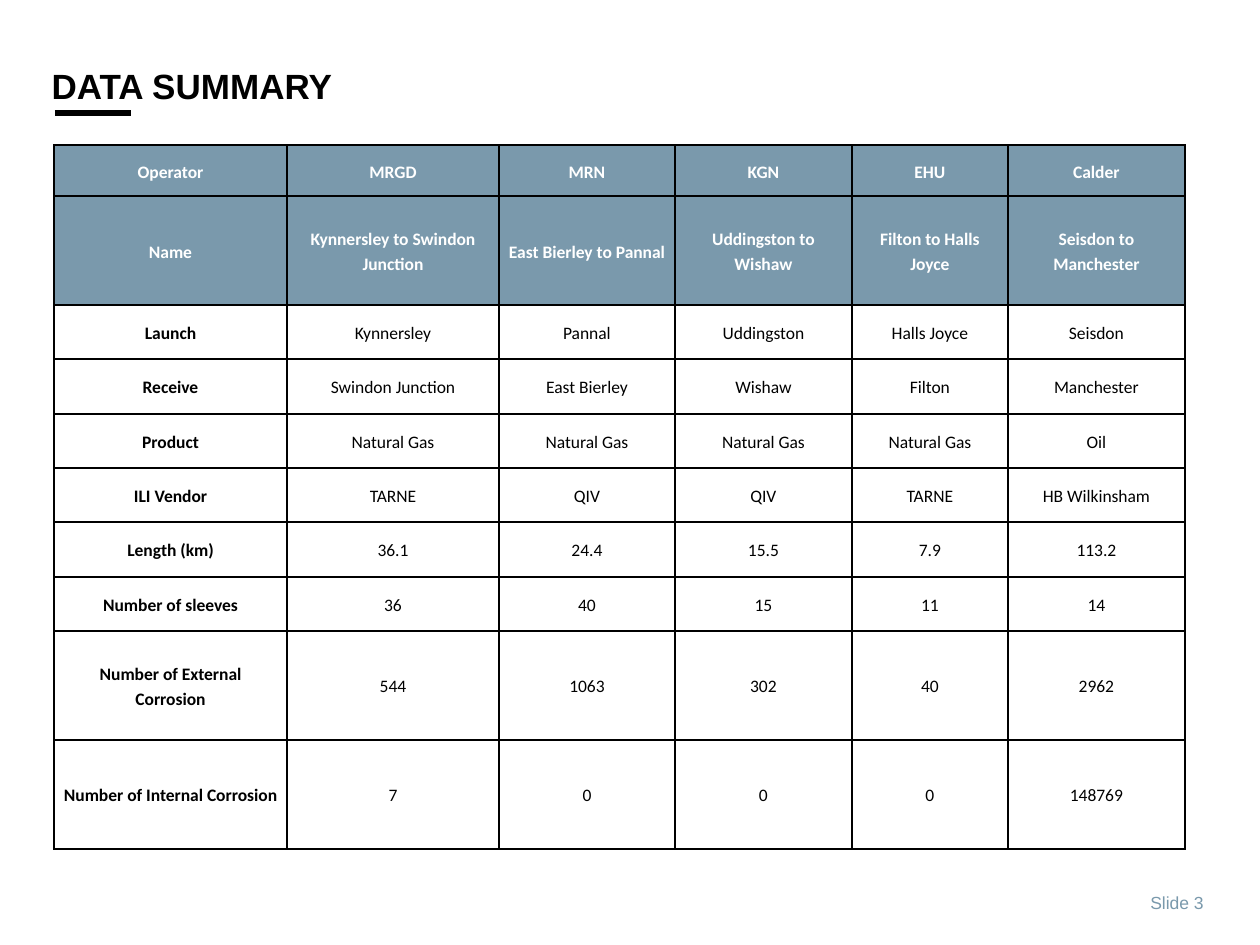
from lxml.etree import SubElement
from pptx import Presentation
from pptx.dml.color import RGBColor
from pptx.enum.shapes import MSO_CONNECTOR
from pptx.enum.text import MSO_ANCHOR, PP_ALIGN
from pptx.oxml import parse_xml
from pptx.oxml.ns import nsdecls, qn
from pptx.util import Emu, Pt

TITLE = "DATA SUMMARY"
PAGE_LABEL = "Slide 3"
PIPELINES = [
    ("Operator", "MRGD", "MRN", "KGN", "EHU", "Calder"),
    ("Name", "Kynnersley to Swindon Junction", "East Bierley to Pannal",
     "Uddingston to Wishaw", "Filton to Halls Joyce", "Seisdon to Manchester"),
    ("Launch", "Kynnersley", "Pannal", "Uddingston", "Halls Joyce", "Seisdon"),
    ("Receive", "Swindon Junction", "East Bierley", "Wishaw", "Filton", "Manchester"),
    ("Product", "Natural Gas", "Natural Gas", "Natural Gas", "Natural Gas", "Oil"),
    ("ILI Vendor", "TARNE", "QIV", "QIV", "TARNE", "HB Wilkinsham"),
    ("Length (km)", "36.1", "24.4", "15.5", "7.9", "113.2"),
    ("Number of sleeves", "36", "40", "15", "11", "14"),
    ("Number of External Corrosion", "544", "1063", "302", "40", "2962"),
    ("Number of Internal Corrosion", "7", "0", "0", "0", "148769"),
]
HEADER_ROWS = 2
COLUMN_WIDTHS = (233, 212, 176, 177, 156, 177)
ROW_HEIGHTS = (51, 109, 54, 55, 54, 54, 55, 54, 109, 109)

BLACK, WHITE, STEEL = "000000", "FFFFFF", "7A99AC"


def px(length):
    return Emu(round(length * 914400 / 126))


def rgb(color):
    return RGBColor.from_string(color)


def style(paragraph, font_name, size, color, bold=False):
    font = paragraph.font
    font.name, font.size, font.bold = font_name, Pt(size), bold
    font.color.rgb = rgb(color)


def place(shape, left, top, width, height):
    shape.left, shape.top, shape.width, shape.height = map(px, (left, top, width, height))


def add_borders(cell):
    """Put a 1 pt black line on each side, ahead of the fill as the schema asks."""
    properties = cell._tc.get_or_add_tcPr()
    for position, side in enumerate(("lnL", "lnR", "lnT", "lnB")):
        properties.insert(position, parse_xml(
            f'<a:{side} {nsdecls("a")} w="12700"><a:solidFill>'
            f'<a:srgbClr val="{BLACK}"/></a:solidFill></a:{side}>'))


def add_heading(slide):
    title = slide.shapes.title
    place(title, 39, 55, 868, 101)
    frame = title.text_frame
    frame.text = TITLE
    frame.word_wrap = True
    frame.vertical_anchor = MSO_ANCHOR.TOP
    frame.margin_top = px(9)
    frame.paragraphs[0].alignment = PP_ALIGN.LEFT
    style(frame.paragraphs[0], "Arial", 20, BLACK, bold=True)

    underline = slide.shapes.add_connector(
        MSO_CONNECTOR.STRAIGHT, px(55), px(113), px(131), px(113))
    underline.line.color.rgb = rgb(BLACK)
    underline.line.width = Pt(3)
    SubElement(underline._element.spPr, qn("a:effectLst"))


def add_pipeline_table(slide):
    table = slide.shapes.add_table(
        len(PIPELINES), len(COLUMN_WIDTHS), px(54), px(145),
        px(sum(COLUMN_WIDTHS)), px(sum(ROW_HEIGHTS))).table
    table.horz_banding = False
    for column, width in zip(table.columns, COLUMN_WIDTHS):
        column.width = px(width)
    for r, (row, height, texts) in enumerate(zip(table.rows, ROW_HEIGHTS, PIPELINES)):
        row.height = px(height)
        header = r < HEADER_ROWS
        for c, (cell, text) in enumerate(zip(row.cells, texts)):
            cell.text = text
            cell.vertical_anchor = MSO_ANCHOR.MIDDLE
            cell.margin_left = cell.margin_right = px(9)
            cell.margin_top = cell.margin_bottom = 0
            if header:
                cell.fill.solid()
                cell.fill.fore_color.rgb = rgb(STEEL)
            else:
                cell.fill.background()
            add_borders(cell)
            paragraph = cell.text_frame.paragraphs[0]
            paragraph.alignment = PP_ALIGN.CENTER
            paragraph.line_spacing = 1.15
            style(paragraph, "Calibri", 10, WHITE if header else BLACK,
                  bold=header or c == 0)


def add_page_label(slide):
    frame = slide.shapes.add_textbox(px(1100), px(891), px(116), px(28)).text_frame
    frame.word_wrap = True
    frame.vertical_anchor = MSO_ANCHOR.BOTTOM
    frame.text = PAGE_LABEL
    frame.paragraphs[0].alignment = PP_ALIGN.RIGHT
    style(frame.paragraphs[0], "Arial", 10, STEEL)


def main():
    presentation = Presentation()
    presentation.slide_width, presentation.slide_height = px(1260), px(945)
    slide = presentation.slides.add_slide(presentation.slide_layouts[5])
    add_heading(slide)
    add_pipeline_table(slide)
    add_page_label(slide)
    presentation.save("out.pptx")


if __name__ == "__main__":
    main()
